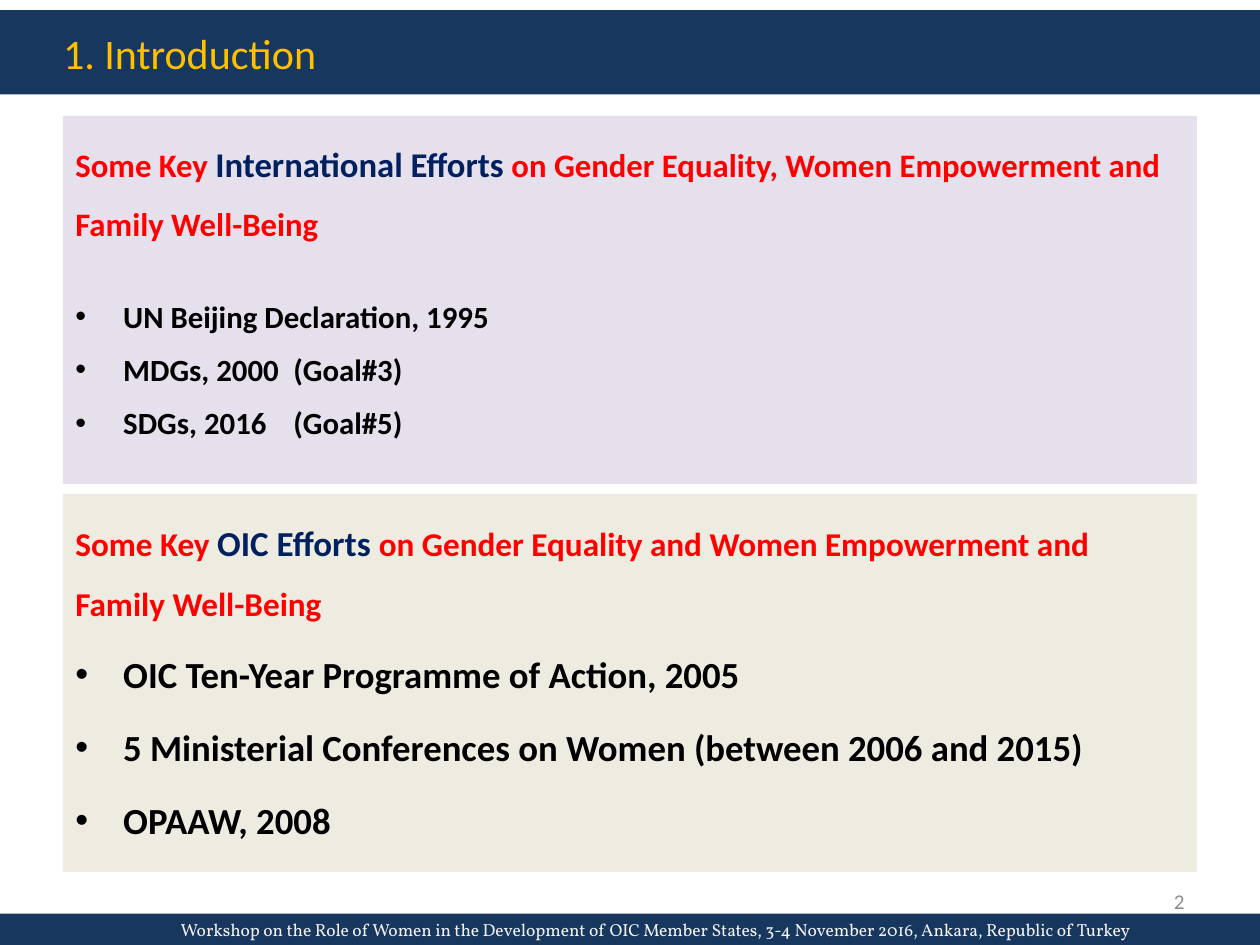
from pptx import Presentation
from pptx.dml.color import RGBColor
from pptx.enum.shapes import MSO_SHAPE
from pptx.enum.text import MSO_ANCHOR, MSO_AUTO_SIZE, PP_ALIGN
from pptx.oxml.ns import qn
from pptx.util import Inches, Pt
from lxml import etree

COLORS = {"navy": "17375E", "gold": "FFC000", "pale": "F2F2F2", "lilac": "E6E0EC",
          "sand": "EEECE1", "red": "FF0000", "blue": "002060", "black": "000000",
          "gray": "8C8C8C"}
INDENT = Inches(0.38)
GOAL_TAB = Inches(1.73)


def rgb(name):
    return RGBColor.from_string(COLORS[name])


def fill_shape(sp, color):
    sp.fill.solid()
    sp.fill.fore_color.rgb = rgb(color)
    sp.line.fill.background()


def add_rect(s, box, color):
    sp = s.shapes.add_shape(MSO_SHAPE.RECTANGLE, *map(Inches, box))
    sp.shadow.inherit = False
    fill_shape(sp, color)
    return sp


def set_frame(tf, anchor=MSO_ANCHOR.MIDDLE, left=0.1):
    formats = {"word_wrap": True, "auto_size": MSO_AUTO_SIZE.NONE,
               "vertical_anchor": anchor, "margin_left": Inches(left),
               "margin_right": Inches(0.1), "margin_top": Inches(0.05),
               "margin_bottom": Inches(0.05)}
    for name, value in formats.items():
        setattr(tf, name, value)


def add_run(p, text, size, color, font="Calibri", bold=False):
    r = p.add_run()
    r.text = text
    for name, value in {"size": Pt(size), "name": font, "bold": bold}.items():
        setattr(r.font, name, value)
    r.font.color.rgb = rgb(color)


def add_line(tf, text, size, color, align, font="Calibri"):
    p = tf.paragraphs[0]
    p.alignment = align
    add_run(p, text, size, color, font)


def set_bullet(p):
    pPr = p._p.get_or_add_pPr()
    pPr.set("marL", str(INDENT))
    pPr.set("indent", str(-INDENT))
    etree.SubElement(pPr, qn("a:buFont"), typeface="Arial")
    etree.SubElement(pPr, qn("a:buChar"), char="•")
    tabs = etree.SubElement(pPr, qn("a:tabLst"))
    etree.SubElement(tabs, qn("a:tab"), pos=str(GOAL_TAB), algn="l")


def add_panel(s, box, color, heading, bullets, size, spacing, gaps):
    tf = add_rect(s, box, color).text_frame
    set_frame(tf, MSO_ANCHOR.TOP)
    p = tf.paragraphs[0]
    p.alignment = PP_ALIGN.LEFT
    p.line_spacing = 1.5
    for text, run_size, run_color in heading:
        add_run(p, text, run_size, run_color, bold=True)
    for i, text in enumerate(bullets):
        p = tf.add_paragraph()
        p.alignment = PP_ALIGN.LEFT
        p.line_spacing = spacing
        p.space_before = Pt(gaps[min(i, 1)])
        set_bullet(p)
        add_run(p, text, size, "black", bold=True)


def add_title(s, text):
    sp = s.shapes.title
    sp.left, sp.top, sp.width, sp.height = map(Inches, (0, 0.08, 10, 0.67))
    fill_shape(sp, "navy")
    set_frame(sp.text_frame, left=0.5)
    add_line(sp.text_frame, text, 24, "gold", PP_ALIGN.LEFT)


def add_footer(s, text):
    tf = add_rect(s, (0, 7.25, 10, 0.25), "navy").text_frame
    set_frame(tf, left=0.5)
    add_line(tf, text, 10, "pale", PP_ALIGN.CENTER, "Vollkorn")


def add_number(s, text):
    tf = s.shapes.add_textbox(*map(Inches, (7.17, 6.95, 2.33, 0.4))).text_frame
    set_frame(tf)
    add_line(tf, text, 12, "gray", PP_ALIGN.RIGHT)


def main():
    prs = Presentation()
    prs.slide_width, prs.slide_height = Inches(10), Inches(7.5)
    s = prs.slides.add_slide(prs.slide_layouts[5])
    add_footer(s, "Workshop on the Role of Women in the Development of OIC Member States, "
                  "3-4 November 2016, Ankara, Republic of Turkey")
    add_title(s, "1. Introduction")
    add_panel(s, (0.5, 0.92, 9, 2.92), "lilac",
              [("Some Key ", 18.7, "red"), ("International Efforts ", 19.8, "blue"),
               ("on Gender Equality, Women Empowerment and Family Well-Being", 18.7, "red")],
              ["UN Beijing Declaration, 1995", "MDGs, 2000\t(Goal#3)", "SDGs, 2016\t(Goal#5)"],
              17.6, 1.3, (24.5, 3))
    add_number(s, "2")
    add_panel(s, (0.5, 3.92, 9, 3), "sand",
              [("Some Key ", 19, "red"), ("OIC Efforts ", 20, "blue"),
               ("on Gender Equality and Women Empowerment and Family Well-Being", 19, "red")],
              ["OIC Ten-Year Programme of Action, 2005",
               "5 Ministerial Conferences on Women (between 2006 and 2015)", "OPAAW, 2008"],
              21, 1.5, (4, 4))
    prs.save("out.pptx")


if __name__ == "__main__":
    main()
